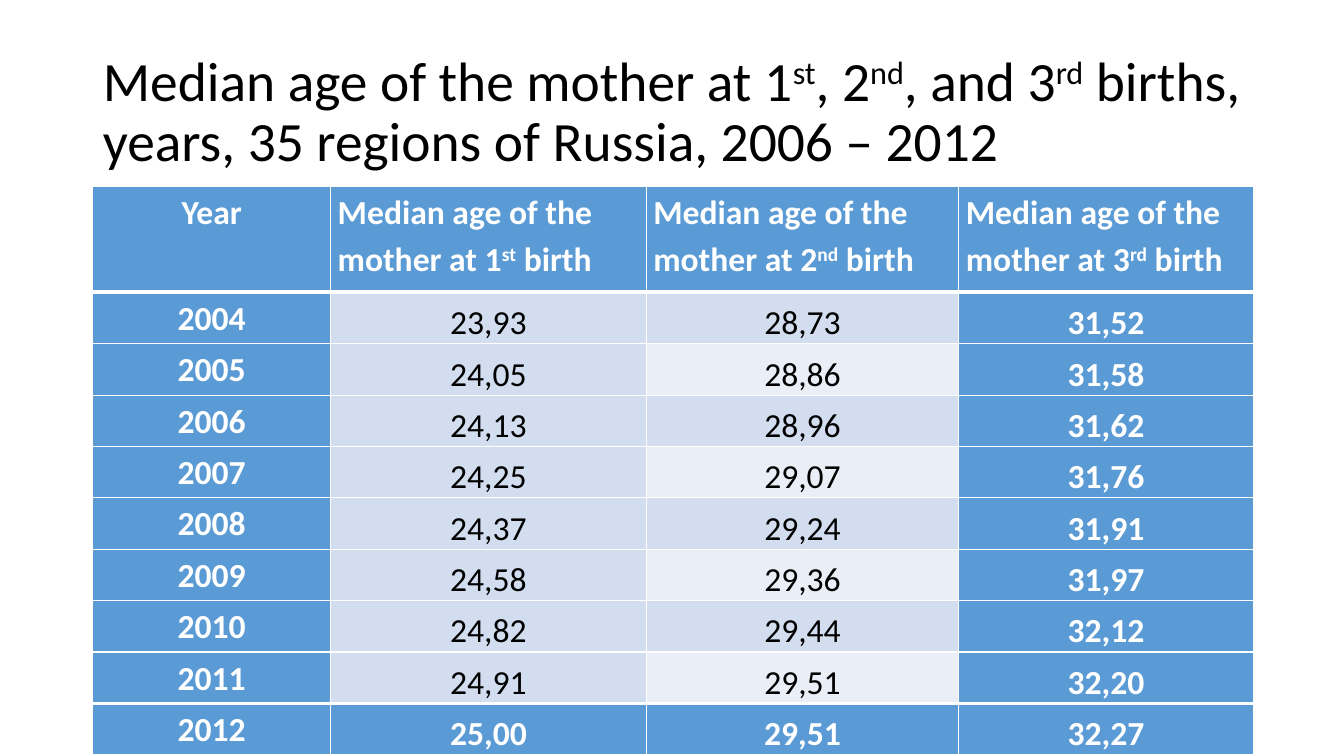
import pptx
import pptx.dml.color
import pptx.enum.text
import pptx.oxml
import pptx.oxml.ns
import pptx.util
from dataclasses import dataclass

Inches = pptx.util.Inches
ALIGN = pptx.enum.text.PP_ALIGN
ANCHOR = pptx.enum.text.MSO_ANCHOR


@dataclass(frozen=True)
class Theme:
    font: str = "Calibri"
    title_size: float = 39.6
    table_size: float = 24
    dark: str = "000000"
    light: str = "FFFFFF"
    accent: str = "5B9BD5"
    band: str = "D2DEEF"
    pale_band: str = "EAEFF7"
    thin: float = 1
    thick: float = 3


THEME = Theme()

# Text between ^ marks is raised
TITLE = ("Median age of the mother at 1^st^, 2^nd^, and 3^rd^ births, years, "
         "35 regions of Russia, 2006 – 2012")
HEADINGS = ["Year"] + [f"Median age of the mother at {order} birth"
                       for order in ("1^st^", "2^nd^", "3^rd^")]
MEDIAN_AGES = [
    ("2004", "23,93", "28,73", "31,52"),
    ("2005", "24,05", "28,86", "31,58"),
    ("2006", "24,13", "28,96", "31,62"),
    ("2007", "24,25", "29,07", "31,76"),
    ("2008", "24,37", "29,24", "31,91"),
    ("2009", "24,58", "29,36", "31,97"),
    ("2010", "24,82", "29,44", "32,12"),
    ("2011", "24,91", "29,51", "32,20"),
    ("2012", "25,00", "29,51", "32,27"),
]
COLUMN_WIDTHS = (2.36, 3.13, 3.1, 2.92)
HEADER_HEIGHT, ROW_HEIGHT = 1.05, 0.51


def write(frame, text, *, size, color, bold=False, align=ALIGN.LEFT, spacing=1.0):
    paragraph = frame.paragraphs[0]
    paragraph.alignment = align
    paragraph.line_spacing = spacing
    paragraph.space_before = pptx.util.Pt(0)
    for index, part in enumerate(text.split("^")):
        run = paragraph.add_run()
        run.text = part
        run.font.name = THEME.font
        run.font.size = pptx.util.Pt(size)
        run.font.bold = bold
        run.font.color.rgb = pptx.dml.color.RGBColor.from_string(color)
        if index % 2:
            run.font._element.set("baseline", "30000")


def set_borders(cell, *, top, bottom):
    properties = cell._tc.get_or_add_tcPr()
    widths = {"L": THEME.thin, "R": THEME.thin, "T": top, "B": bottom}
    for side, width in widths.items():
        properties.append(pptx.oxml.parse_xml(
            f'<a:ln{side} {pptx.oxml.ns.nsdecls("a")} w="{pptx.util.Pt(width)}">'
            f'<a:solidFill><a:srgbClr val="{THEME.light}"/></a:solidFill></a:ln{side}>'))


def cell_fill(row, column, last_row):
    if row in (0, last_row) or column in (0, 3):
        return THEME.accent
    return THEME.pale_band if column == 2 and row % 2 == 0 else THEME.band


def place_title(slide, left, top, width, height):
    title = slide.shapes.title
    title.left, title.top = Inches(left), Inches(top)
    title.width, title.height = Inches(width), Inches(height)
    frame = title.text_frame
    frame.word_wrap = True
    frame.auto_size = pptx.enum.text.MSO_AUTO_SIZE.NONE
    frame.vertical_anchor = ANCHOR.MIDDLE
    write(frame, TITLE, size=THEME.title_size, color=THEME.dark, spacing=0.9)


def place_age_table(slide, left, top, width, height):
    rows = [HEADINGS, *MEDIAN_AGES]
    last_row = len(rows) - 1
    ages = slide.shapes.add_table(len(rows), len(HEADINGS), Inches(left), Inches(top),
                                  Inches(width), Inches(height)).table
    ages.horz_banding = False
    for column, column_width in zip(ages.columns, COLUMN_WIDTHS):
        column.width = Inches(column_width)

    for r, values in enumerate(rows):
        ages.rows[r].height = Inches(ROW_HEIGHT if r else HEADER_HEIGHT)
        for c, value in enumerate(values):
            cell = ages.cell(r, c)
            fill = cell_fill(r, c, last_row)
            strong = fill == THEME.accent
            is_age = r > 0 and c > 0
            cell.margin_left = cell.margin_right = Inches(0.07)
            cell.margin_top = cell.margin_bottom = 0
            cell.vertical_anchor = ANCHOR.BOTTOM if is_age else ANCHOR.TOP
            # Heavy rules under the header and above the last year
            set_borders(cell,
                        top=THEME.thick if r in (1, last_row) else THEME.thin,
                        bottom=THEME.thick if r in (0, last_row - 1) else THEME.thin)
            cell.fill.solid()
            cell.fill.fore_color.rgb = pptx.dml.color.RGBColor.from_string(fill)
            write(cell.text_frame, value, size=THEME.table_size, bold=strong,
                  color=THEME.light if strong else THEME.dark,
                  align=ALIGN.LEFT if r == 0 and c > 0 else ALIGN.CENTER,
                  spacing=1.07 if is_age and r <= 2 else 1.15)


def main():
    deck = pptx.Presentation()
    deck.slide_width, deck.slide_height = Inches(13.33), Inches(7.5)
    slide = deck.slides.add_slide(deck.slide_layouts[5])
    place_title(slide, 0.92, 0.4, 11.5, 1.45)
    place_age_table(slide, 0.92, 1.85, 11.5, 5.65)
    deck.save("out.pptx")


if __name__ == "__main__":
    main()
